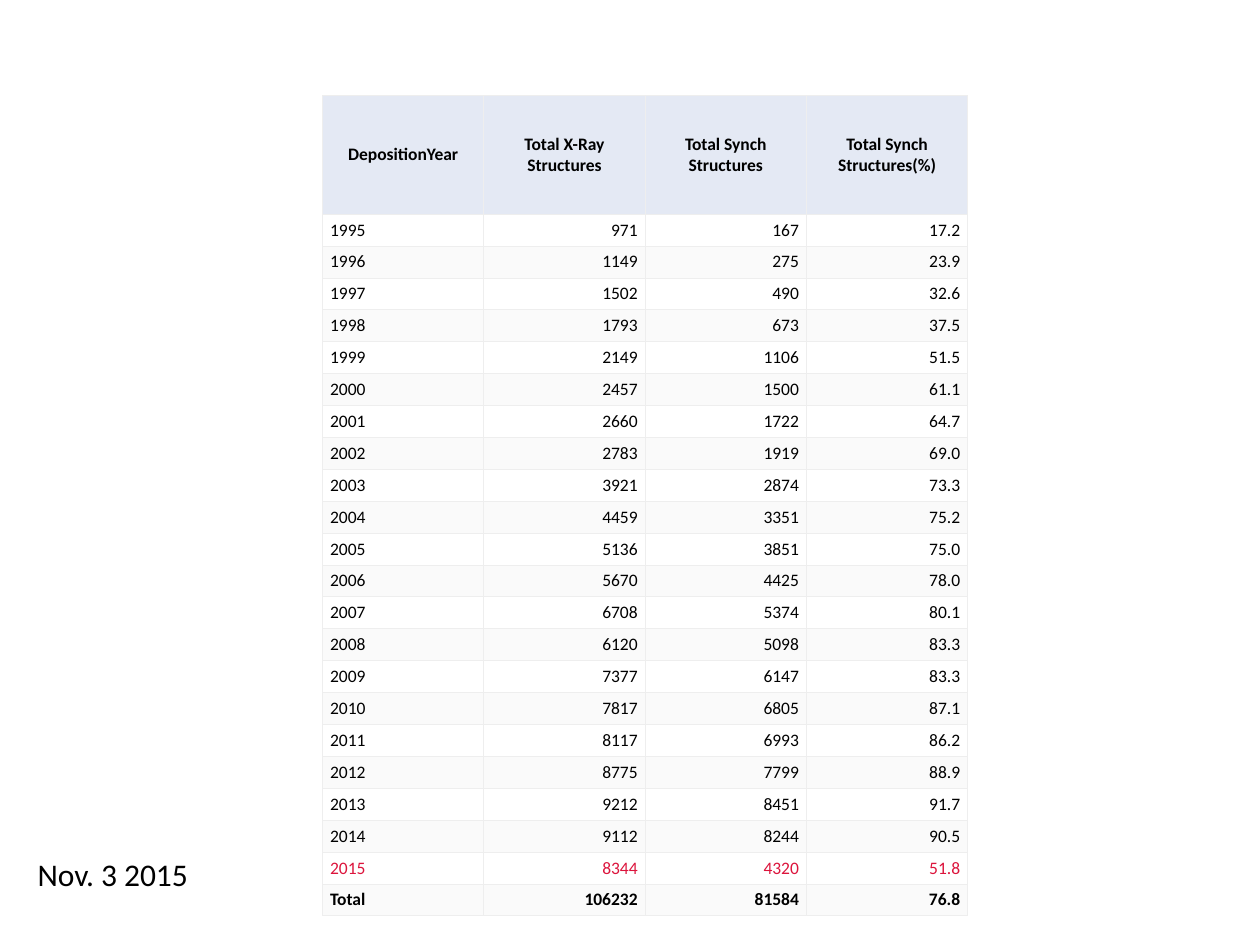
from dataclasses import dataclass

from lxml.etree import SubElement
from pptx import Presentation
from pptx.dml.color import RGBColor
from pptx.enum.text import MSO_ANCHOR, MSO_AUTO_SIZE, PP_ALIGN
from pptx.oxml.ns import qn
from pptx.util import Inches, Pt

HEADINGS = ("DepositionYear", "Total X-Ray Structures",
            "Total Synch Structures", "Total Synch Structures(%)")
FIRST_YEAR = 1995
YEARLY_COUNTS = [  # X-ray structures, synchrotron structures, percentage
    (971, 167, 17.2), (1149, 275, 23.9), (1502, 490, 32.6),
    (1793, 673, 37.5), (2149, 1106, 51.5), (2457, 1500, 61.1),
    (2660, 1722, 64.7), (2783, 1919, 69.0), (3921, 2874, 73.3),
    (4459, 3351, 75.2), (5136, 3851, 75.0), (5670, 4425, 78.0),
    (6708, 5374, 80.1), (6120, 5098, 83.3), (7377, 6147, 83.3),
    (7817, 6805, 87.1), (8117, 6993, 86.2), (8775, 7799, 88.9),
    (9212, 8451, 91.7), (9112, 8244, 90.5), (8344, 4320, 51.8),
]
TOTALS = ("Total", 106232, 81584, 76.8)
PARTIAL_YEAR = 2015
DATE = "Nov. 3 2015"

TABLE_LEFT, TABLE_TOP, TABLE_WIDTH, TABLE_HEIGHT = 2.56, 0.76, 5.12, 6.51
HEADING_HEIGHT = 0.94


@dataclass(frozen=True)
class Theme:
    font: str = "Calibri"
    table_size: int = 10
    date_size: int = 18
    text: str = "000000"
    partial: str = "DC143C"
    heading_fill: str = "E4E9F4"
    row_fills: tuple = ("FFFFFF", "FAFAFA")
    border: str = "EEEEEE"
    border_width: float = 0.6


THEME = Theme()


def style_font(paragraph, size, color, bold=False):
    font = paragraph.font
    font.name, font.size, font.bold = THEME.font, Pt(size), bold
    font.color.rgb = RGBColor.from_string(color)


def add_borders(cell):
    properties = cell._tc.get_or_add_tcPr()
    for position, side in enumerate(("lnL", "lnR", "lnT", "lnB")):
        line = properties.makeelement(qn(f"a:{side}"), {"w": str(Pt(THEME.border_width))})
        fill = SubElement(line, qn("a:solidFill"))
        SubElement(fill, qn("a:srgbClr"), val=THEME.border)
        properties.insert(position, line)  # borders must precede the cell fill


def fill_cell(cell, value, alignment, fill, color, bold):
    cell.text = str(value)
    cell.vertical_anchor = MSO_ANCHOR.MIDDLE
    cell.margin_left = cell.margin_right = Inches(0.06)
    cell.margin_top = cell.margin_bottom = Inches(0.01)
    cell.fill.solid()
    cell.fill.fore_color.rgb = RGBColor.from_string(fill)
    add_borders(cell)
    paragraph = cell.text_frame.paragraphs[0]
    paragraph.alignment = alignment
    style_font(paragraph, THEME.table_size, color, bold)


def add_structure_table(page):
    years = [(year, *counts) for year, counts in enumerate(YEARLY_COUNTS, FIRST_YEAR)]
    records = [HEADINGS, *years, TOTALS]
    frame = page.shapes.add_table(
        len(records), len(HEADINGS), Inches(TABLE_LEFT), Inches(TABLE_TOP),
        Inches(TABLE_WIDTH), Inches(TABLE_HEIGHT))
    table = frame.table
    row_height = (TABLE_HEIGHT - HEADING_HEIGHT) / (len(records) - 1)

    for row, record in enumerate(records):
        is_heading = record is HEADINGS
        table.rows[row].height = Inches(HEADING_HEIGHT if is_heading else row_height)
        fill = THEME.heading_fill if is_heading else THEME.row_fills[(row - 1) % 2]
        color = THEME.partial if record[0] == PARTIAL_YEAR else THEME.text
        bold = is_heading or record is TOTALS
        for column, value in enumerate(record):
            if is_heading:
                alignment = PP_ALIGN.CENTER
            else:
                alignment = PP_ALIGN.RIGHT if column else PP_ALIGN.LEFT
            fill_cell(table.cell(row, column), value, alignment, fill, color, bold)


def add_date(page):
    box = page.shapes.add_textbox(Inches(0.2), Inches(6.74), Inches(1.65), Inches(0.4))
    box.text_frame.word_wrap = True
    box.text_frame.auto_size = MSO_AUTO_SIZE.SHAPE_TO_FIT_TEXT
    paragraph = box.text_frame.paragraphs[0]
    paragraph.text = DATE
    style_font(paragraph, THEME.date_size, THEME.text)


def main():
    deck = Presentation()
    deck.slide_width, deck.slide_height = Inches(10), Inches(7.5)
    page = deck.slides.add_slide(deck.slide_layouts[6])
    add_structure_table(page)
    add_date(page)
    deck.save("out.pptx")


if __name__ == "__main__":
    main()
